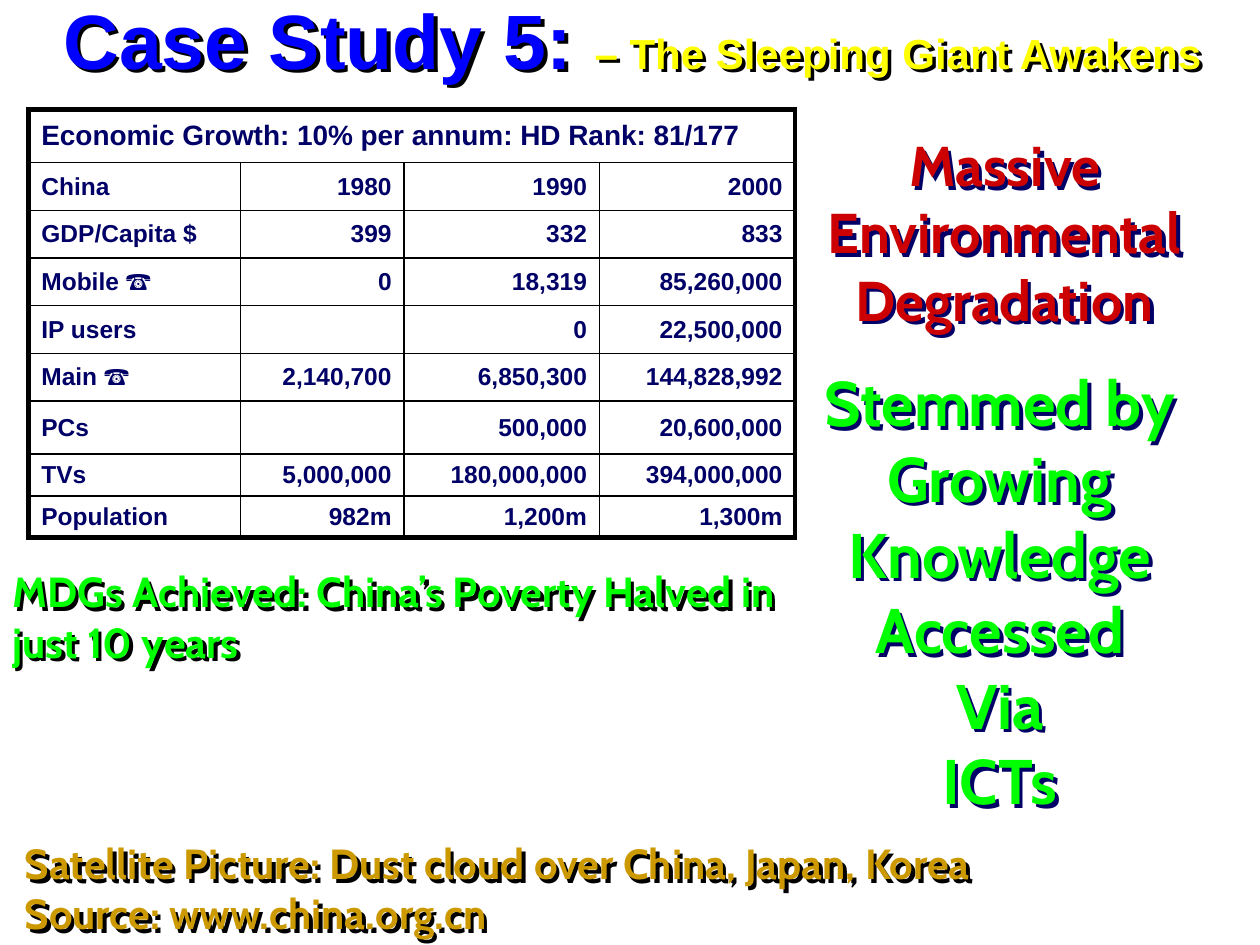
from lxml import etree
from pptx import Presentation
from pptx import util as u
from pptx.dml.color import RGBColor
from pptx.enum import text as t
from pptx.oxml.ns import qn

hues = {
    "blue": "0000FF", "yellow": "FFFF00", "navy": "000066", "gold": "CC9900",
    "red": "CC0000", "green": "00FF00", "black": "000000", "white": "FFFFFF",
}


def write(para, text, size=24, hue="navy", font="Cabin", align=t.PP_ALIGN.LEFT):
    para.alignment = align
    run = para.add_run()
    run.text = text
    run.font.size = u.Pt(size)
    run.font.bold = True
    run.font.name = font
    run.font.color.rgb = RGBColor.from_string(hues[hue])


def tint(node, hue, alpha=None):
    fill = etree.SubElement(node, qn("a:solidFill"))
    shade = etree.SubElement(fill, qn("a:srgbClr"), val=hues[hue])
    if alpha:
        etree.SubElement(shade, qn("a:alpha"), val=str(alpha * 1000))


deck = Presentation()
deck.slide_width, deck.slide_height = u.Cm(25.4), u.Cm(19.05)
slide = deck.slides.add_slide(deck.slide_layouts[6])
left, mid, right = t.PP_ALIGN.LEFT, t.PP_ALIGN.CENTER, t.PP_ALIGN.RIGHT

rows = [
    ["Economic Growth: 10% per annum: HD Rank: 81/177", "", "", ""],
    ["China", "1980", "1990", "2000"],
    ["GDP/Capita $", "399", "332", "833"],
    ["Mobile ☎", "0", "18,319", "85,260,000"],
    ["IP users", "", "0", "22,500,000"],
    ["Main ☎", "2,140,700", "6,850,300", "144,828,992"],
    ["PCs", "", "500,000", "20,600,000"],
    ["TVs", "5,000,000", "180,000,000", "394,000,000"],
    ["Population", "982m", "1,200m", "1,300m"],
]
wide = [4.27, 3.3, 3.94, 3.94]
high = [1.07] + [0.96] * 5 + [1.07, 0.84, 0.84]
grid = slide.shapes.add_table(
    len(rows), len(wide), u.Cm(0.58), u.Cm(2.21), u.Cm(sum(wide)), u.Cm(sum(high))
).table
for col, size in zip(grid.columns, wide):
    col.width = u.Cm(size)
for row, size in zip(grid.rows, high):
    row.height = u.Cm(size)
grid.cell(0, 0).merge(grid.cell(0, 3))

for r, row in enumerate(rows):
    for c, word in enumerate(row):
        cell = grid.cell(r, c)
        cell.vertical_anchor = t.MSO_ANCHOR.MIDDLE
        write(cell.text_frame.paragraphs[0], word, size=14 if r else 16,
              font="Arial", align=right if c else left)
        props = cell._tc.get_or_add_tcPr()
        edges = {"L": c == 0, "R": c == 3 or r == 0, "T": r == 0, "B": r == 8}
        for side, thick in edges.items():
            line = etree.SubElement(
                props, qn("a:ln" + side), w=str(u.Pt(3 if thick else 1)))
            tint(line, "black")
        tint(props, "white", 41)

arial = {"font": "Arial", "align": mid}
gold = {"hue": "gold"}
red = {"size": 32, "hue": "red", "align": mid}
green = {"size": 36, "hue": "green", "align": mid}
boxes = [
    (0.1, 0, 25.3, 1.83, "black", t.MSO_ANCHOR.BOTTOM,
     [[("Case Study 5: ", {"size": 44, "hue": "blue", **arial}),
       ("– The Sleeping Giant Awakens", {"hue": "yellow", **arial})]]),
    (0.25, 16.76, 30.3, 2.29, "black", t.MSO_ANCHOR.TOP,
     [[("Satellite Picture: Dust cloud over China, Japan, Korea", gold)],
      [("Source: www.china.org.cn", gold)]]),
    (15.11, 2.51, 10.29, 4.32, "navy", t.MSO_ANCHOR.TOP,
     [[("Massive Environmental Degradation", red)]]),
    (14.91, 7.21, 10.49, 9.4, "navy", t.MSO_ANCHOR.TOP,
     [[(line, green)] for line in
      ("Stemmed by Growing Knowledge", "Accessed", "Via", "ICTs")]),
    (0, 11.28, 16.33, 2.29, "black", t.MSO_ANCHOR.TOP,
     [[("MDGs Achieved: China’s Poverty Halved in just 10 years",
        {"hue": "green"})]]),
]
for x, y, w, h, shade, anchor, lines in boxes:
    box = slide.shapes.add_textbox(u.Cm(x), u.Cm(y), u.Cm(w), u.Cm(h))
    box.shadow.inherit = False
    glow = box._element.spPr.find(qn("a:effectLst"))
    cast = etree.SubElement(glow, qn("a:outerShdw"), dist=str(u.Cm(0.1)),
                            dir="2700000", algn="ctr", rotWithShape="0")
    etree.SubElement(cast, qn("a:srgbClr"), val=hues[shade])
    frame = box.text_frame
    frame.word_wrap = True
    frame.vertical_anchor = anchor
    for i, line in enumerate(lines):
        para = frame.add_paragraph() if i else frame.paragraphs[0]
        for word, style in line:
            write(para, word, **style)

deck.save("out.pptx")
